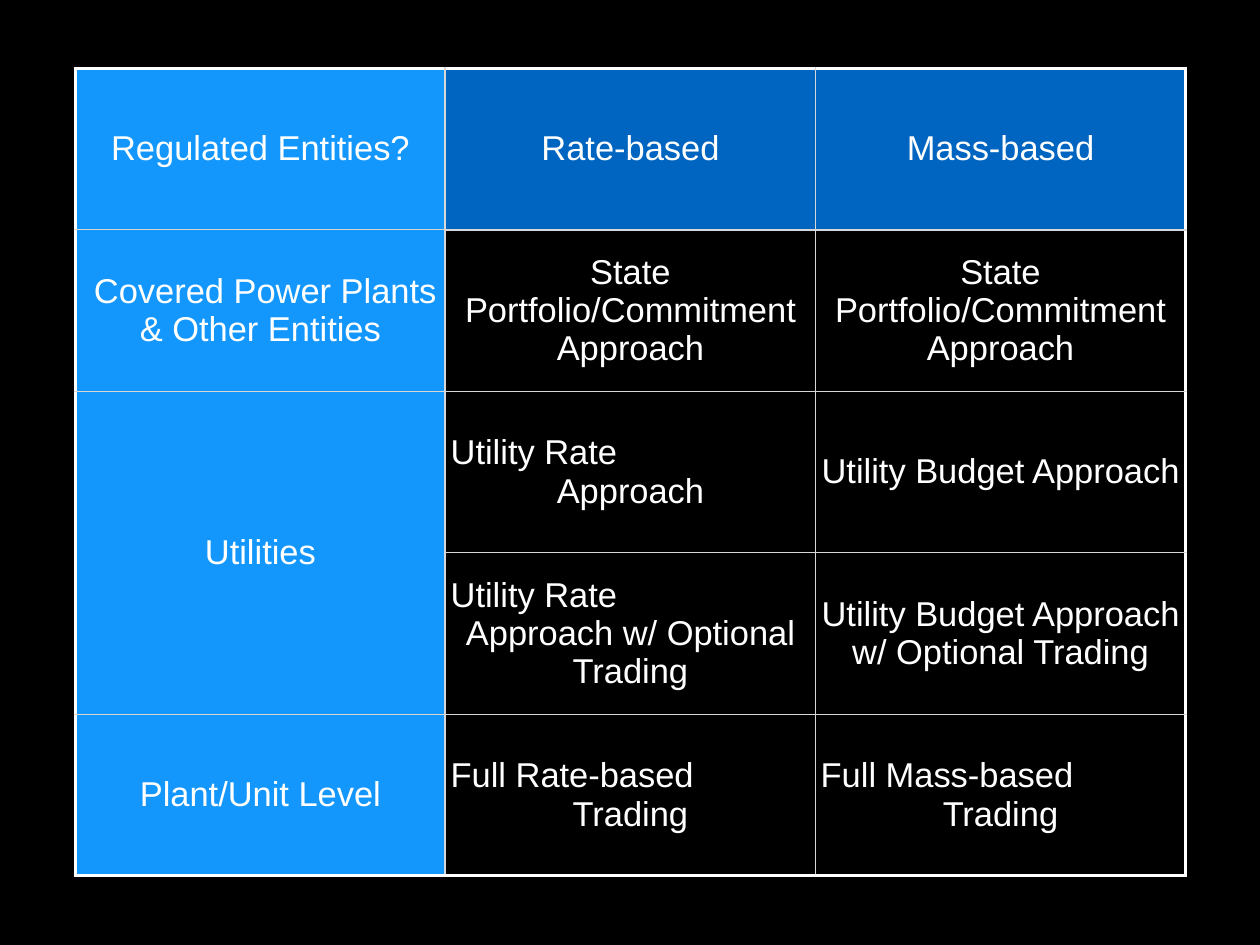
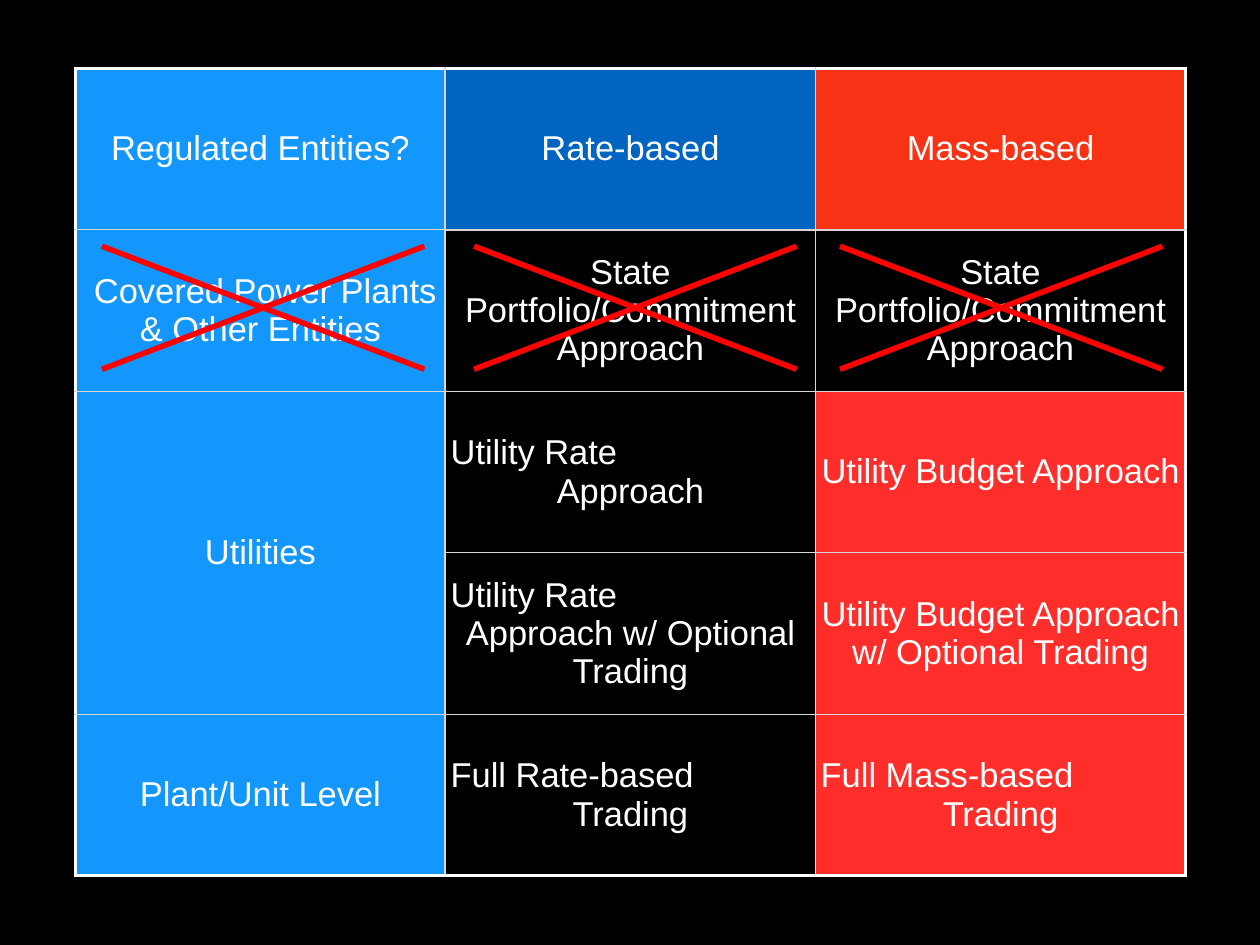
import dataclasses

import lxml.etree
import pptx
import pptx.dml.color
import pptx.enum.text
import pptx.oxml.ns
import pptx.util

Inches = pptx.util.Inches
Pt = pptx.util.Pt
qn = pptx.oxml.ns.qn
PP_ALIGN = pptx.enum.text.PP_ALIGN


@dataclasses.dataclass(frozen=True)
class Theme:
    """Colours, type and line widths shared by the slides."""

    background: str = "000000"
    text: str = "FFFFFF"
    frame: str = "FFFFFF"
    grid: str = "D6D7D6"
    header: str = "0065C1"
    label: str = "1497FC"
    hot_header: str = "F83214"
    hot_cell: str = "FF2E2A"
    cross: str = "FF0000"
    font: str = "Arial"
    size: float = 28
    frame_width: float = 3
    divider_width: float = 2
    grid_width: float = 1
    cross_width: float = 4.5


THEME = Theme()
TABLE_BOX = (0.85, 0.77, 12.53, 9.12)
CROSS_LEFTS = (1.15, 5.35, 9.48)
CROSS_TOP, CROSS_WIDTH, CROSS_HEIGHT = 2.78, 3.64, 1.39
INSET = 0.06
ROWS = (
    ("Regulated Entities?", "Rate-based", "Mass-based"),
    (" Covered Power Plants & Other Entities",
     "State Portfolio/Commitment Approach",
     "State Portfolio/Commitment Approach"),
    ("Utilities", "Utility Rate\nApproach", "Utility Budget Approach"),
    ("", "Utility Rate\nApproach w/ Optional Trading",
     "Utility Budget Approach w/ Optional Trading"),
    ("Plant/Unit Level", "Full Rate-based\nTrading", "Full Mass-based\nTrading"),
)


def rgb(color):
    """Return the colour object for a hex string."""
    return pptx.dml.color.RGBColor.from_string(color)


def cell_color(row, col, highlight):
    """Return the fill colour of a cell, or None when it is clear."""
    if col == 0:
        return THEME.label
    hot = highlight and col == 2
    if row == 0:
        return THEME.hot_header if hot else THEME.header
    return THEME.hot_cell if hot and row > 1 else None


def cell_borders(row, col):
    """Return the colour and width of each side of a cell."""
    frame = (THEME.frame, THEME.frame_width)
    divider = (THEME.grid, THEME.divider_width)
    grid = (THEME.grid, THEME.grid_width)
    return {
        "lnL": frame if col == 0 else divider if col == 1 else grid,
        "lnR": frame if col == 2 else divider if col == 0 else grid,
        "lnT": frame if row == 0 else divider if row == 1 and col else grid,
        "lnB": frame if row == len(ROWS) - 1
        else divider if row == 0 and col else grid,
    }


def draw_borders(cell, borders):
    """Add the border lines to a cell."""
    tc_pr = cell._tc.get_or_add_tcPr()
    for side, (color, width) in borders.items():
        ln = lxml.etree.SubElement(tc_pr, qn(f"a:{side}"), w=str(Pt(width)))
        fill = lxml.etree.SubElement(ln, qn("a:solidFill"))
        lxml.etree.SubElement(fill, qn("a:srgbClr"), val=color)


def write_cell(cell, text):
    """Write centred text, with the first of two lines set left."""
    cell.vertical_anchor = pptx.enum.text.MSO_ANCHOR.MIDDLE
    cell.margin_left = cell.margin_right = Inches(INSET)
    cell.margin_top = cell.margin_bottom = Inches(INSET)
    tf = cell.text_frame
    tf.text = text
    for p in tf.paragraphs:
        p.alignment = PP_ALIGN.CENTER
        p.font.name = THEME.font
        p.font.size = Pt(THEME.size)
        p.font.bold = False
        p.font.color.rgb = rgb(THEME.text)
    if len(tf.paragraphs) > 1:
        tf.paragraphs[0].alignment = PP_ALIGN.LEFT


def add_options_table(s, box, highlight):
    """Draw the table of options in the given box."""
    left, top, width, height = box
    n_rows, n_cols = len(ROWS), len(ROWS[0])
    table = s.shapes.add_table(
        n_rows, n_cols, Inches(left), Inches(top), Inches(width), Inches(height)
    ).table
    table.first_row = table.horz_banding = False
    for column in table.columns:
        column.width = Inches(width / n_cols)
    for table_row in table.rows:
        table_row.height = Inches(height / n_rows)
    for row, texts in enumerate(ROWS):
        for col, text in enumerate(texts):
            cell = table.cell(row, col)
            write_cell(cell, text)
            draw_borders(cell, cell_borders(row, col))
            color = cell_color(row, col, highlight)
            if color:
                cell.fill.solid()
                cell.fill.fore_color.rgb = rgb(color)
            else:
                cell.fill.background()
    table.cell(2, 0).merge(table.cell(3, 0))


def add_cross(s, left, top, width, height):
    """Cross out the given box with two diagonals."""
    right, bottom = left + width, top + height
    for start, end in ((left, right), (right, left)):
        line = s.shapes.add_connector(
            pptx.enum.shapes.MSO_CONNECTOR.STRAIGHT,
            Inches(start), Inches(bottom), Inches(end), Inches(top),
        )
        line.line.color.rgb = rgb(THEME.cross)
        line.line.width = Pt(THEME.cross_width)
        lxml.etree.SubElement(line._element.spPr, qn("a:effectLst"))


def add_options_slide(prs, highlight=False):
    """Add a table slide, with the mass-based choice marked if asked."""
    s = prs.slides.add_slide(prs.slide_layouts.get_by_name("Blank"))
    add_options_table(s, TABLE_BOX, highlight)
    if highlight:
        for left in CROSS_LEFTS:
            add_cross(s, left, CROSS_TOP, CROSS_WIDTH, CROSS_HEIGHT)


def main():
    """Build and save the presentation."""
    prs = pptx.Presentation()
    prs.slide_width, prs.slide_height = Inches(14.22), Inches(10.67)
    fill = prs.slide_master.background.fill
    fill.solid()
    fill.fore_color.rgb = rgb(THEME.background)
    add_options_slide(prs)
    add_options_slide(prs, highlight=True)
    prs.save("out.pptx")


import pptx.enum.shapes

if __name__ == "__main__":
    main()
